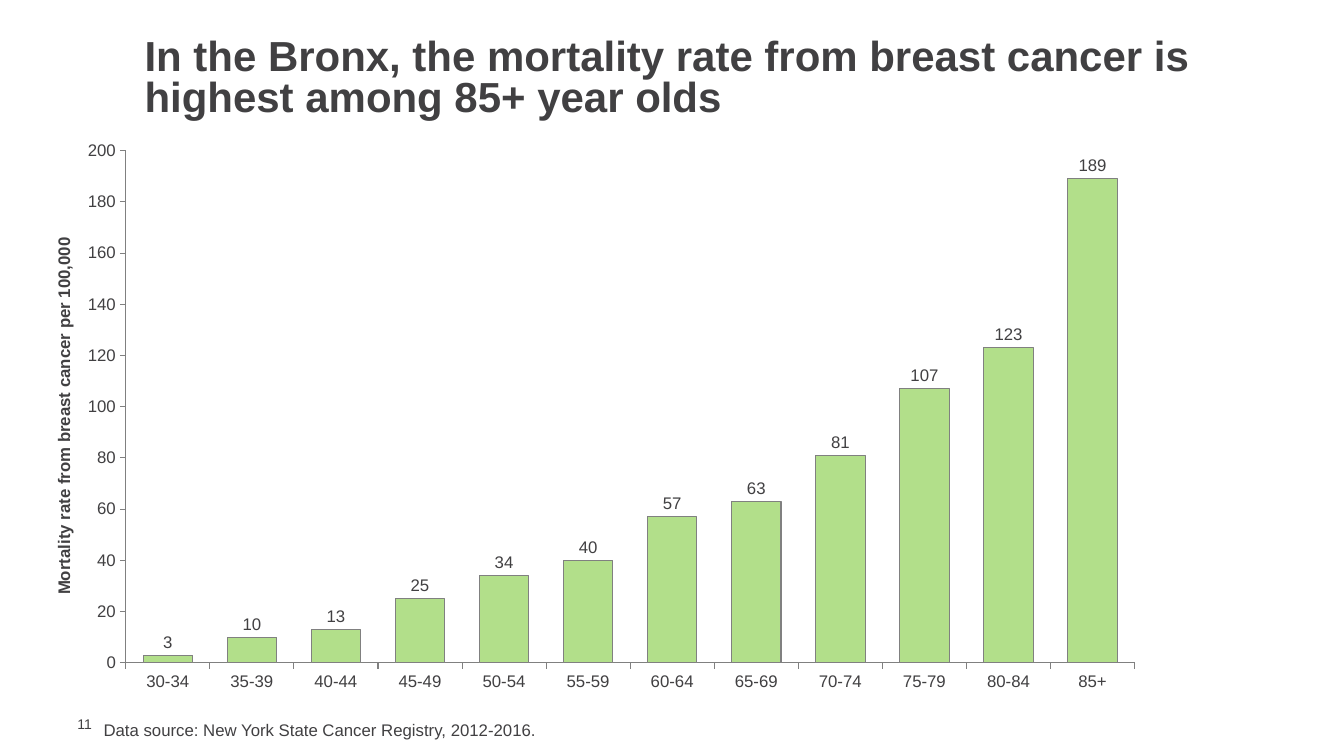
from dataclasses import dataclass
from lxml import etree
from pptx import Presentation
from pptx.chart.data import CategoryChartData as ChartData
from pptx.dml.color import RGBColor as RGB
from pptx.enum.chart import XL_CHART_TYPE as Kind, XL_LABEL_POSITION as Spot, XL_TICK_MARK as Tick
from pptx.enum.text import MSO_ANCHOR as Anchor, MSO_AUTO_SIZE as Fit, PP_ALIGN as Align
from pptx.oxml.ns import qn
from pptx.util import Cm, Pt


@dataclass(frozen=True)
class Theme:
    face: str = "Arial"
    ink: RGB = RGB(0x41, 0x40, 0x42)
    line: RGB = RGB(0x80, 0x80, 0x80)
    bar: RGB = RGB(0xB2, 0xDF, 0x8A)
    head: int = 30
    body: int = 12
    small: int = 10
    rule: float = 0.75


THEME = Theme()
RATES = {
    "30-34": 3, "35-39": 10, "40-44": 13, "45-49": 25,
    "50-54": 34, "55-59": 40, "60-64": 57, "65-69": 63,
    "70-74": 81, "75-79": 107, "80-84": 123, "85+": 189,
}


def style(font, size, bold=False):
    font.name = THEME.face
    font.size = Pt(size)
    font.bold = bold
    font.color.rgb = THEME.ink


def edge(line):
    line.color.rgb = THEME.line
    line.width = Pt(THEME.rule)


def write(frame, text, size, bold=False):
    para = frame.paragraphs[0]
    run = para.add_run()
    run.text = text
    style(run.font, size, bold)
    return para


def place(shape, box):
    shape.left, shape.top, shape.width, shape.height = map(Cm, box)


def add_title(slide, box, text):
    title = slide.shapes.title
    place(title, box)
    frame = title.text_frame
    frame.word_wrap = True
    frame.auto_size = Fit.NONE
    frame.vertical_anchor = Anchor.MIDDLE
    para = write(frame, text, THEME.head, True)
    para.alignment = Align.LEFT
    para.line_spacing = 0.8


def set_plot(chart, **area):
    plot = chart.element.find(".//" + qn("c:plotArea"))
    for old in plot.findall(qn("c:layout")):
        plot.remove(old)
    layout = etree.Element(qn("c:layout"))
    manual = etree.SubElement(layout, qn("c:manualLayout"))
    parts = {"layoutTarget": "inner", "xMode": "edge", "yMode": "edge", **area}
    for name, value in parts.items():
        etree.SubElement(manual, qn("c:" + name)).set("val", str(value))
    plot.insert(0, layout)


def add_bars(slide, box, rates, label):
    data = ChartData(number_format="0")
    data.categories = list(rates)
    data.add_series("Mortality rate", list(rates.values()))
    chart = slide.shapes.add_chart(Kind.COLUMN_CLUSTERED, *map(Cm, box), data).chart
    style(chart.font, THEME.small)
    chart.has_title = False
    chart.has_legend = False
    set_plot(chart, x=0.068, y=0.029, w=0.91, h=0.903)

    for axis in (chart.category_axis, chart.value_axis):
        axis.has_major_gridlines = False
        axis.major_tick_mark = Tick.OUTSIDE
        axis.minor_tick_mark = Tick.NONE
        style(axis.tick_labels.font, THEME.body)
        edge(axis.format.line)

    scale = chart.value_axis
    scale.minimum_scale, scale.maximum_scale, scale.major_unit = 0, 200, 20
    scale.tick_labels.number_format = "0"
    scale.tick_labels.number_format_is_linked = False
    name = scale.axis_title
    write(name.text_frame, label, THEME.body, True)
    turn = next(name.element.iter(qn("a:bodyPr")))
    turn.set("rot", "-5400000")
    turn.set("vert", "horz")

    plot = chart.plots[0]
    plot.gap_width = 70
    plot.vary_by_categories = False
    bars = plot.series[0]
    bars.format.fill.solid()
    bars.format.fill.fore_color.rgb = THEME.bar
    edge(bars.format.line)
    tags = bars.data_labels
    tags.show_value = True
    tags.position = Spot.OUTSIDE_END
    tags.number_format = "0"
    tags.number_format_is_linked = False
    style(tags.font, THEME.body)


def add_foot(slide, box, page, source):
    left, top, width, height = box
    number = slide.shapes.add_textbox(*map(Cm, (left, top, 1.1, 0.43))).text_frame
    number.margin_left = Cm(0.25)
    number.margin_top = number.margin_right = number.margin_bottom = 0
    number.vertical_anchor = Anchor.MIDDLE
    number.word_wrap = True
    write(number, page, THEME.small)
    note = slide.shapes.add_textbox(*map(Cm, (left + 0.66, top, width - 0.66, height))).text_frame
    note.word_wrap = True
    write(note, source, THEME.body)


def main():
    deck = Presentation()
    deck.slide_width, deck.slide_height = Cm(33.87), Cm(19.05)
    slide = deck.slides.add_slide(deck.slide_layouts[5])
    add_title(slide, (3.39, 0.86, 27.1, 2.31),
              "In the Bronx, the mortality rate from breast cancer is highest among 85+ year olds")
    add_bars(slide, (1.27, 3.38, 27.94, 14.3), RATES,
             "Mortality rate from breast cancer per 100,000")
    add_foot(slide, (1.7, 18.02, 25.86, 0.76), "11",
             "Data source: New York State Cancer Registry, 2012-2016.")
    deck.save("out.pptx")


if __name__ == "__main__":
    main()
